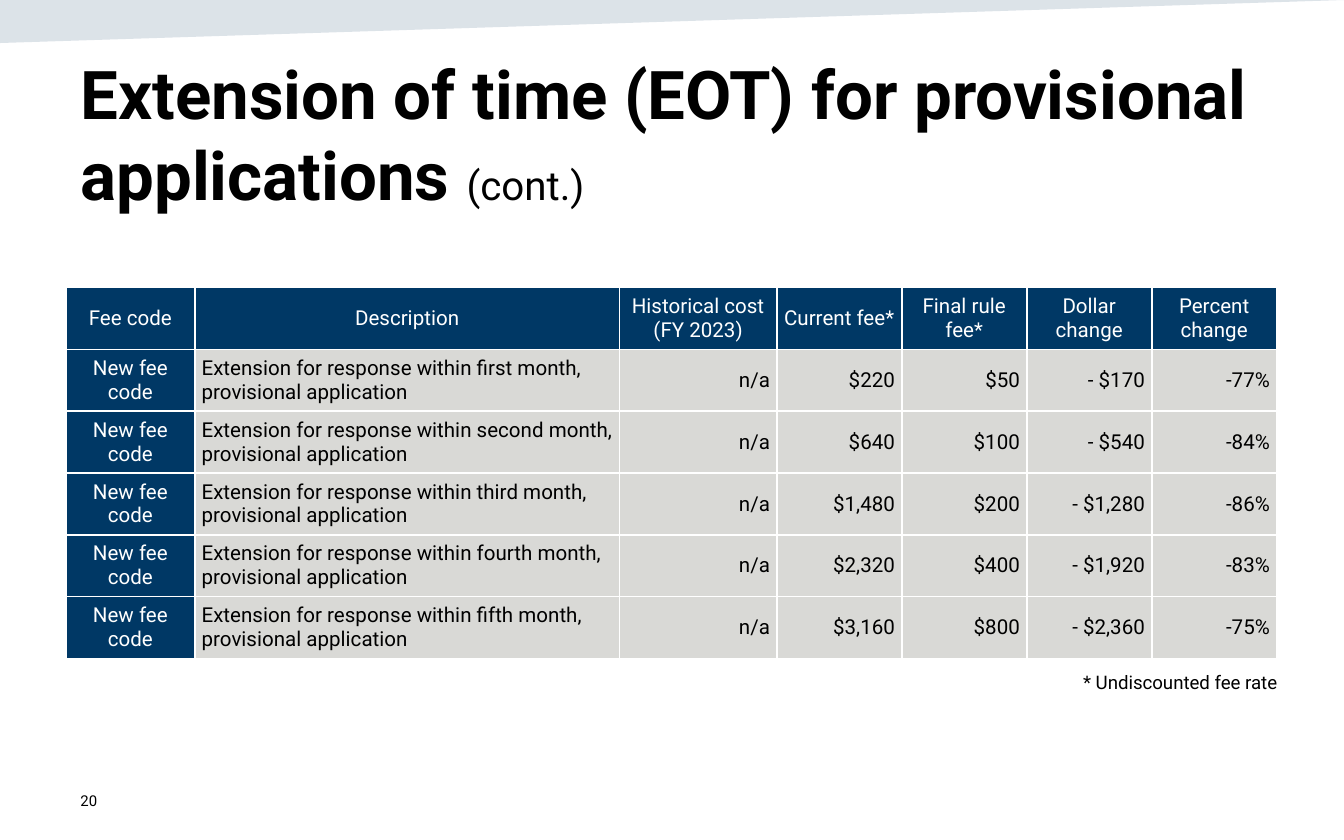
from dataclasses import dataclass

from lxml import etree
from pptx import Presentation, util as u
from pptx.dml.color import RGBColor
from pptx.enum import text
from pptx.oxml import ns

NAVY = RGBColor(0x00, 0x38, 0x65)
GREY = RGBColor(0xD9, 0xD9, 0xD6)
WEDGE_BLUE = RGBColor(0x16, 0x44, 0x69)
WHITE = RGBColor(0xFF, 0xFF, 0xFF)
BLACK = RGBColor(0x00, 0x00, 0x00)
FONT = "Roboto"
LEFT, CENTER, RIGHT = text.PP_ALIGN.LEFT, text.PP_ALIGN.CENTER, text.PP_ALIGN.RIGHT
MIDDLE, TOP = text.MSO_ANCHOR.MIDDLE, text.MSO_ANCHOR.TOP

SLIDE_W, SLIDE_H = u.Inches(10), u.Inches(6.25)
TABLE_LEFT, TABLE_TOP = u.Inches(0.49), u.Inches(2.14)
ROW_H = u.Inches(0.46)
CELL_INSET = u.Inches(0.05)


@dataclass
class Column:
    header: str
    width: float  # inches
    align: text.PP_ALIGN


@dataclass
class Fee:
    month: str
    current: str
    final: str
    dollars: str
    percent: str

    def cells(self) -> list[str]:
        description = f"Extension for response within {self.month} month, provisional application"
        return ["New fee code", description, "n/a",
                self.current, self.final, self.dollars, self.percent]


@dataclass
class Note:
    text: str
    box: tuple[float, float, float, float]  # inches
    size: float
    align: text.PP_ALIGN
    anchor: text.MSO_ANCHOR


COLUMNS = [
    Column("Fee code", 0.96, CENTER),
    Column("Description", 3.16, LEFT),
    Column("Historical cost\n(FY 2023)", 1.17, RIGHT),
    Column("Current fee*", 0.93, RIGHT),
    Column("Final rule fee*", 0.93, RIGHT),
    Column("Dollar change", 0.93, RIGHT),
    Column("Percent change", 0.93, RIGHT),
]
FEES = [
    Fee("first", "$220", "$50", "- $170", "-77%"),
    Fee("second", "$640", "$100", "- $540", "-84%"),
    Fee("third", "$1,480", "$200", "- $1,280", "-86%"),
    Fee("fourth", "$2,320", "$400", "- $1,920", "-83%"),
    Fee("fifth", "$3,160", "$800", "- $2,360", "-75%"),
]
NOTES = [
    Note("* Undiscounted fee rate", (7.51, 4.94, 2.09, 0.27), 10, RIGHT, TOP),
    Note("20", (0.5, 5.79, 2.25, 0.33), 8, LEFT, MIDDLE),
]


def format_run(r, size: float, color: RGBColor, bold: bool = False) -> None:
    r.font.name, r.font.size, r.font.bold = FONT, u.Pt(size), bold
    r.font.color.rgb = color


def format_text(tf, size: float, color: RGBColor, align: text.PP_ALIGN) -> None:
    for p in tf.paragraphs:
        p.alignment = align
        for r in p.runs:
            format_run(r, size, color)


def add_wedge(slide) -> None:
    builder = slide.shapes.build_freeform(0, 0)
    builder.add_line_segments([(0, u.Inches(0.32)), (SLIDE_W, 0)])
    sp = builder.convert_to_shape()
    sp.shadow.inherit = False
    sp.line.fill.background()
    sp.fill.solid()
    sp.fill.fore_color.rgb = WEDGE_BLUE
    color = sp.fill._xPr.find(".//" + ns.qn("a:srgbClr"))
    etree.SubElement(color, ns.qn("a:alpha"), val="15000")


def set_title(slide) -> None:
    title = slide.shapes.title
    title.left, title.top = u.Inches(0.5), u.Inches(0.34)
    title.width, title.height = u.Inches(9), u.Inches(0.95)
    tf = title.text_frame
    tf.auto_size = text.MSO_AUTO_SIZE.NONE
    tf.word_wrap = True
    tf.vertical_anchor = TOP
    p = tf.paragraphs[0]
    p.alignment = LEFT
    for words, size, bold in [
        ("Extension of time (EOT) for provisional applications ", 36, True),
        ("(cont.)", 21.6, False),
    ]:
        r = p.add_run()
        r.text = words
        format_run(r, size, BLACK, bold)


def add_borders(cell) -> None:
    """Call before filling the cell: borders precede the fill in the XML."""
    props = cell._tc.get_or_add_tcPr()
    for side in ("lnL", "lnR", "lnT", "lnB"):
        line = etree.SubElement(props, ns.qn(f"a:{side}"), w=str(u.Pt(1)))
        fill = etree.SubElement(line, ns.qn("a:solidFill"))
        etree.SubElement(fill, ns.qn("a:srgbClr"), val=str(WHITE))


def fill_cell(cell, words: str, dark: bool, align: text.PP_ALIGN) -> None:
    cell.text_frame.text = words
    cell.vertical_anchor = MIDDLE
    cell.margin_left = cell.margin_right = CELL_INSET
    cell.margin_top = cell.margin_bottom = CELL_INSET
    add_borders(cell)
    cell.fill.solid()
    cell.fill.fore_color.rgb = NAVY if dark else GREY
    format_text(cell.text_frame, 11, WHITE if dark else BLACK, align)


def add_fee_table(slide) -> None:
    rows = [[c.header for c in COLUMNS]] + [fee.cells() for fee in FEES]
    width = u.Inches(sum(c.width for c in COLUMNS))
    table = slide.shapes.add_table(len(rows), len(COLUMNS), TABLE_LEFT, TABLE_TOP,
                                   width, ROW_H * len(rows)).table
    table.horz_banding = False
    for column, spec_column in zip(table.columns, COLUMNS):
        column.width = u.Inches(spec_column.width)
    for i, row in enumerate(rows):
        for j, words in enumerate(row):
            align = CENTER if i == 0 else COLUMNS[j].align
            fill_cell(table.cell(i, j), words, i == 0 or j == 0, align)


def add_note(slide, note: Note) -> None:
    tf = slide.shapes.add_textbox(*map(u.Inches, note.box)).text_frame
    tf.word_wrap = True
    tf.vertical_anchor = note.anchor
    tf.text = note.text
    format_text(tf, note.size, BLACK, note.align)


def main() -> None:
    prs = Presentation()
    prs.slide_width, prs.slide_height = SLIDE_W, SLIDE_H
    slide = prs.slides.add_slide(prs.slide_layouts[5])
    add_wedge(slide)
    set_title(slide)
    add_fee_table(slide)
    for note in NOTES:
        add_note(slide, note)
    prs.save("out.pptx")


if __name__ == "__main__":
    main()
